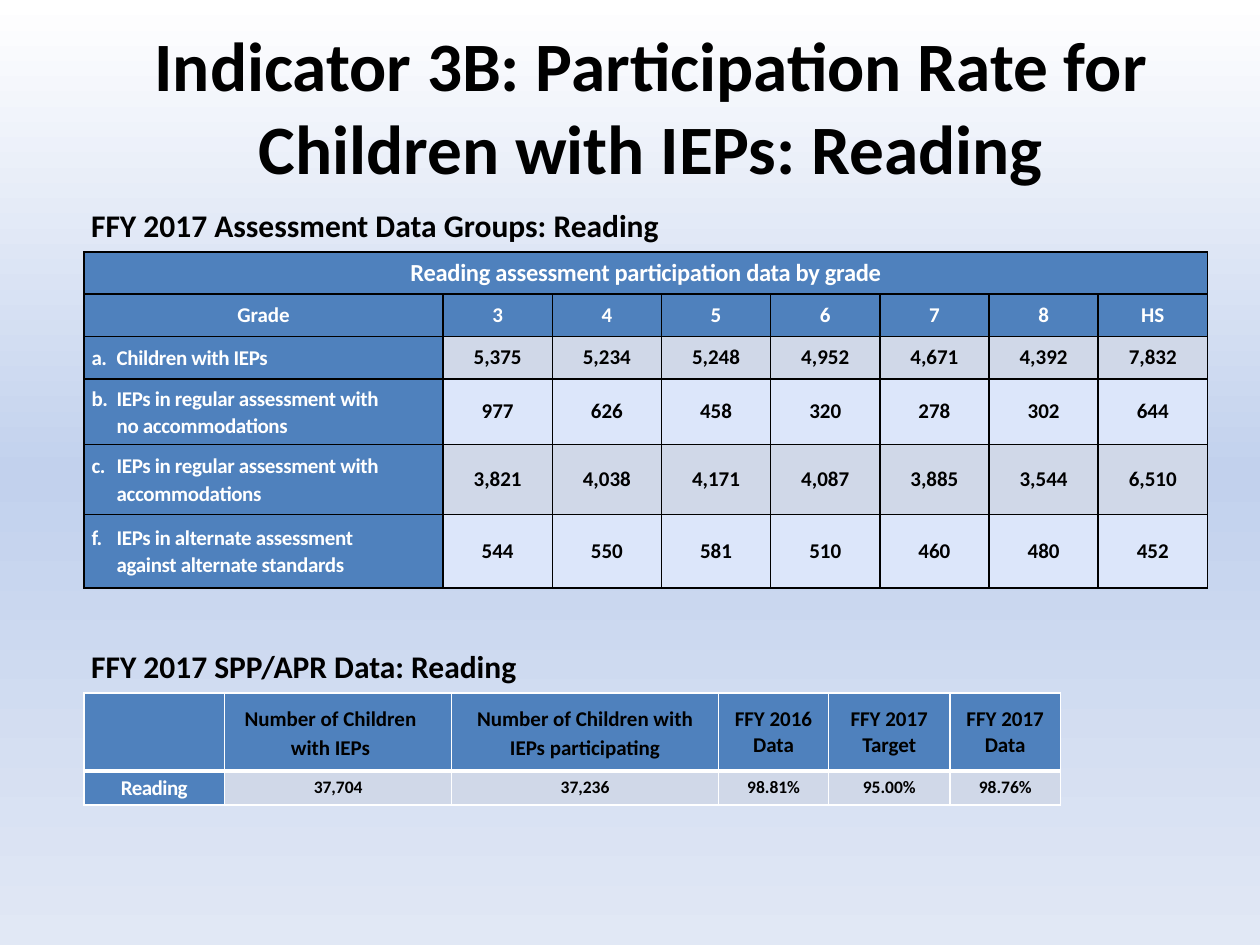
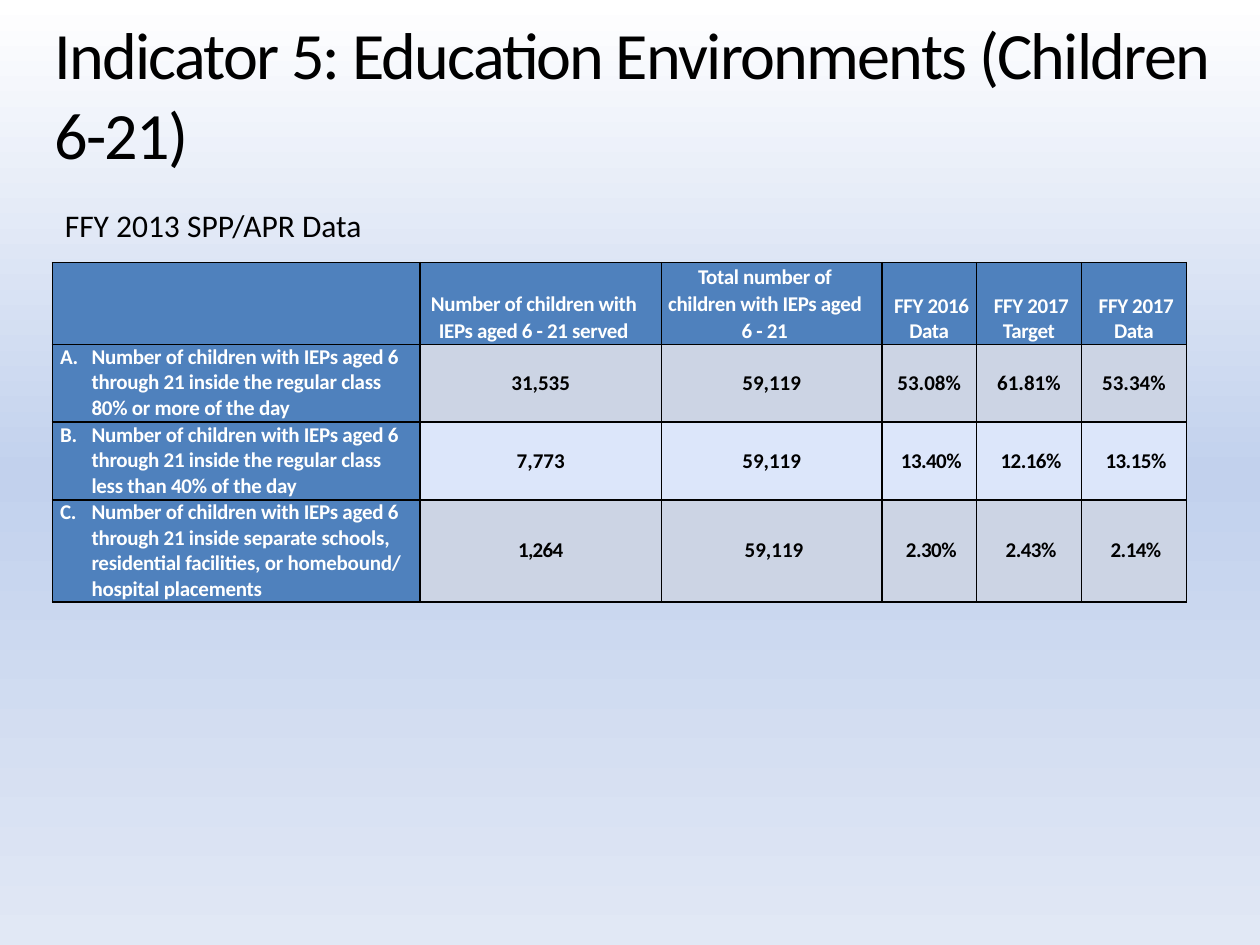
"""Build two slides of assessment participation and education environment tables."""
import copy

import lxml.etree
import pptx
import pptx.dml.color
import pptx.enum.text
import pptx.oxml.ns
import pptx.util

Pt = pptx.util.Pt
Inches = pptx.util.Inches
ALIGN = pptx.enum.text.PP_ALIGN
ANCHOR = pptx.enum.text.MSO_ANCHOR
qn = pptx.oxml.ns.qn
FONT = "Calibri"
COLORS = {
    "black": "000000", "white": "FFFFFF", "header": "4F81BD", "ice": "DCE6FA",
    "mist": "D0D8E8", "slate": "CCD4E4", "sky": "C2D1ED", "haze": "E1E8F5",
}
RGB = {name: pptx.dml.color.RGBColor.from_string(value) for name, value in COLORS.items()}

deck = pptx.Presentation()
deck.slide_width, deck.slide_height = Inches(10), Inches(7.5)
UNIT = deck.slide_width / 120


def write_text(frame, text, size, color="black", bold=True, align=ALIGN.CENTER, spacing=0):
    """Fill a text frame and format every run alike."""
    frame.text = text
    frame.word_wrap = True
    for para in frame.paragraphs:
        para.alignment = align
        for span in para.runs:
            span.font.name, span.font.size, span.font.bold = FONT, Pt(size), bold
            span.font.color.rgb = RGB[color]
            span._r.get_or_add_rPr().set("spc", str(round(spacing * 100)))


def add_grid(page, left, top, widths, heights, rows, bands, line="black", headers=1):
    """Add a bordered table with blue headers, blue labels and banded values."""
    frame = page.shapes.add_table(len(rows), len(widths), round(left * UNIT), round(top * UNIT),
                                  round(sum(widths) * UNIT), round(sum(heights) * UNIT))
    table = frame.table
    table.first_row = table.horz_banding = False
    for column, width in zip(table.columns, widths):
        column.width = round(width * UNIT)
    for row, height in zip(table.rows, heights):
        row.height = round(height * UNIT)
    for r, texts in enumerate(rows):
        for c, text in enumerate(texts):
            cell = table.cell(r, c)
            blue = r < headers or c == 0
            cell.margin_left = cell.margin_right = cell.margin_top = cell.margin_bottom = 0
            cell.vertical_anchor = ANCHOR.MIDDLE
            write_text(cell.text_frame, text, 12, "white" if blue else "black")
            cell.fill.solid()
            cell.fill.fore_color.rgb = RGB["header" if blue else bands[(r - headers) % 2]]
            for place, side in enumerate(("lnL", "lnR", "lnT", "lnB")):
                thick = line == "white" and (r, side) in ((0, "lnB"), (1, "lnT"))
                border = lxml.etree.Element(qn("a:" + side), w=str(Pt(3 if thick else 1)))
                solid = lxml.etree.SubElement(border, qn("a:solidFill"))
                lxml.etree.SubElement(solid, qn("a:srgbClr"), val=COLORS[line])
                cell._tc.get_or_add_tcPr().insert(place, border)
    return table


titles = [
    ("Indicator 3B: Participation Rate for Children with IEPs: Reading",
     (6, 2, 112, 16), 39.6, True, ALIGN.CENTER, ANCHOR.MIDDLE, 0),
    ("Indicator 5: Education Environments (Children 6-21)",
     (4, 2, 113, 15), 37.8, False, ALIGN.LEFT, ANCHOR.BOTTOM, -1),
]
captions = [
    [("FFY 2017 Assessment Data Groups: Reading", (7.5, 19, 108.5, 4.8)),
     ("FFY 2017 SPP/APR Data: Reading", (7.5, 61, 93.5, 4.8))],
    [("FFY 2013 SPP/APR Data", (5, 19, 61, 4.8))],
]
pages = []
for (title, area, size, bold, align, anchor, spacing), notes in zip(titles, captions):
    page = deck.slides.add_slide(deck.slide_layouts[6])
    pages.append(page)
    fill = page.background.fill
    fill.gradient()
    fill.gradient_angle = 270
    stops = fill.gradient_stops[0]._gs.getparent()
    stops.insert(1, copy.deepcopy(stops[0]))
    for stop, position, color in zip(fill.gradient_stops, (0, 0.5, 1), ("white", "sky", "haze")):
        stop.position = position
        stop.color.rgb = RGB[color]
    box = page.shapes.add_textbox(*(round(length * UNIT) for length in area))
    box.text_frame.vertical_anchor = anchor
    write_text(box.text_frame, title, size, bold=bold, align=align, spacing=spacing)
    for caption, area in notes:
        box = page.shapes.add_textbox(*(round(length * UNIT) for length in area))
        write_text(box.text_frame, caption, 18, bold=bold, align=ALIGN.LEFT)

grade_rows = [
    ["Reading assessment participation data by grade"] + [""] * 7,
    ["Grade", "3", "4", "5", "6", "7", "8", "HS"],
    ["a.\tChildren with IEPs", "5,375", "5,234", "5,248", "4,952", "4,671", "4,392", "7,832"],
    ["b.\tIEPs in regular assessment with no accommodations",
     "977", "626", "458", "320", "278", "302", "644"],
    ["c.\tIEPs in regular assessment with accommodations",
     "3,821", "4,038", "4,171", "4,087", "3,885", "3,544", "6,510"],
    ["f.\tIEPs in alternate assessment against alternate standards",
     "544", "550", "581", "510", "460", "480", "452"],
]
grades = add_grid(pages[0], 8, 24, [34.2] + [10.4] * 7, [4, 4.05, 4.05, 6.25, 6.65, 7],
                  grade_rows, ("mist", "ice"), headers=2)
grades.cell(0, 0).merge(grades.cell(0, 7))
write_text(grades.cell(0, 0).text_frame, grade_rows[0][0], 14, "white", spacing=-0.2)
grades.cell(0, 0).text_frame.paragraphs[0].space_before = Pt(3.8)

summary_rows = [
    ["", "Number of Children\nwith IEPs", "Number of Children with\nIEPs participating",
     "FFY 2016 Data", "FFY 2017 Target", "FFY 2017 Data"],
    ["Reading", "37,704", "37,236", "98.81%", "95.00%", "98.76%"],
]
summary = add_grid(pages[0], 8, 66, [13.4, 21.6, 25.45, 10.45, 11.6, 10.5], [7.45, 3.2],
                   summary_rows, ("mist", "ice"), line="white")
for c in range(1, 6):
    write_text(summary.cell(0, c).text_frame, summary_rows[0][c], 12)
    write_text(summary.cell(1, c).text_frame, summary_rows[1][c], 10)
    for para in summary.cell(0, c).text_frame.paragraphs:
        para.line_spacing = 1.15 if c < 3 else 1.0
summary.cell(0, 1).margin_right = Inches(0.12)
write_text(summary.cell(1, 0).text_frame, "Reading", 12, "white", spacing=-0.3)

setting_rows = [
    ["", "Number of children with IEPs aged 6 - 21 served",
     "Total number of children with IEPs aged 6 - 21",
     " FFY 2016 Data", " FFY 2017 Target", " FFY 2017 Data"],
    ["A.\tNumber of children with IEPs aged 6 through 21 inside the regular class 80% or more "
     "of the day", "31,535", "59,119", "53.08%", "61.81%", "53.34%"],
    ["B.\tNumber of children with IEPs aged 6 through 21 inside the regular class less than 40% "
     "of the day", "7,773", "59,119", " 13.40%", " 12.16%", " 13.15%"],
    ["C.\tNumber of children with IEPs aged 6 through 21 inside separate schools, residential "
     "facilities, or homebound/ hospital placements",
     "1,264", " 59,119", " 2.30%", " 2.43%", " 2.14%"],
]
settings = add_grid(pages[1], 5, 25, [35, 23, 21, 9, 10, 10], [7.8, 7.4, 7.4, 9.72],
                    setting_rows, ("slate", "ice"))
for c in range(1, 6):
    cell = settings.cell(0, c)
    cell.vertical_anchor = ANCHOR.BOTTOM
    write_text(cell.text_frame, setting_rows[0][c], 12, "white", spacing=-0.2)
    if c < 3:
        cell.margin_left, cell.margin_right = Inches(0.03), Inches(0.14)
        cell.text_frame.paragraphs[0].line_spacing = 1.07
        cell.text_frame.paragraphs[0].space_before = Pt(3.8)
for r in (2, 3):
    for c in (3, 4, 5):
        write_text(settings.cell(r, c).text_frame, setting_rows[r][c], 12, spacing=-0.3)
write_text(settings.cell(3, 1).text_frame, setting_rows[3][1], 12, spacing=-0.4)

label_styles = [
    (grades, grade_rows, 2, 0.26, -0.2, 0.4, 1.07, ANCHOR.MIDDLE, -0.2),
    (settings, setting_rows, 1, 0.31, -0.25, 0.08, 1.0, ANCHOR.TOP, -0.15),
]
for table, rows, first, margin, indent, right, leading, anchor, spacing in label_styles:
    for r in range(first, len(rows)):
        cell = table.cell(r, 0)
        cell.margin_right = Inches(right)
        cell.vertical_anchor = anchor
        write_text(cell.text_frame, rows[r][0], 12, "white", align=ALIGN.LEFT, spacing=spacing)
        para = cell.text_frame.paragraphs[0]
        para.line_spacing, para.space_before = leading, Pt(3.8)
        properties = para._p.get_or_add_pPr()
        properties.set("marL", str(Inches(margin)))
        properties.set("indent", str(Inches(indent)))

deck.save("out.pptx")
